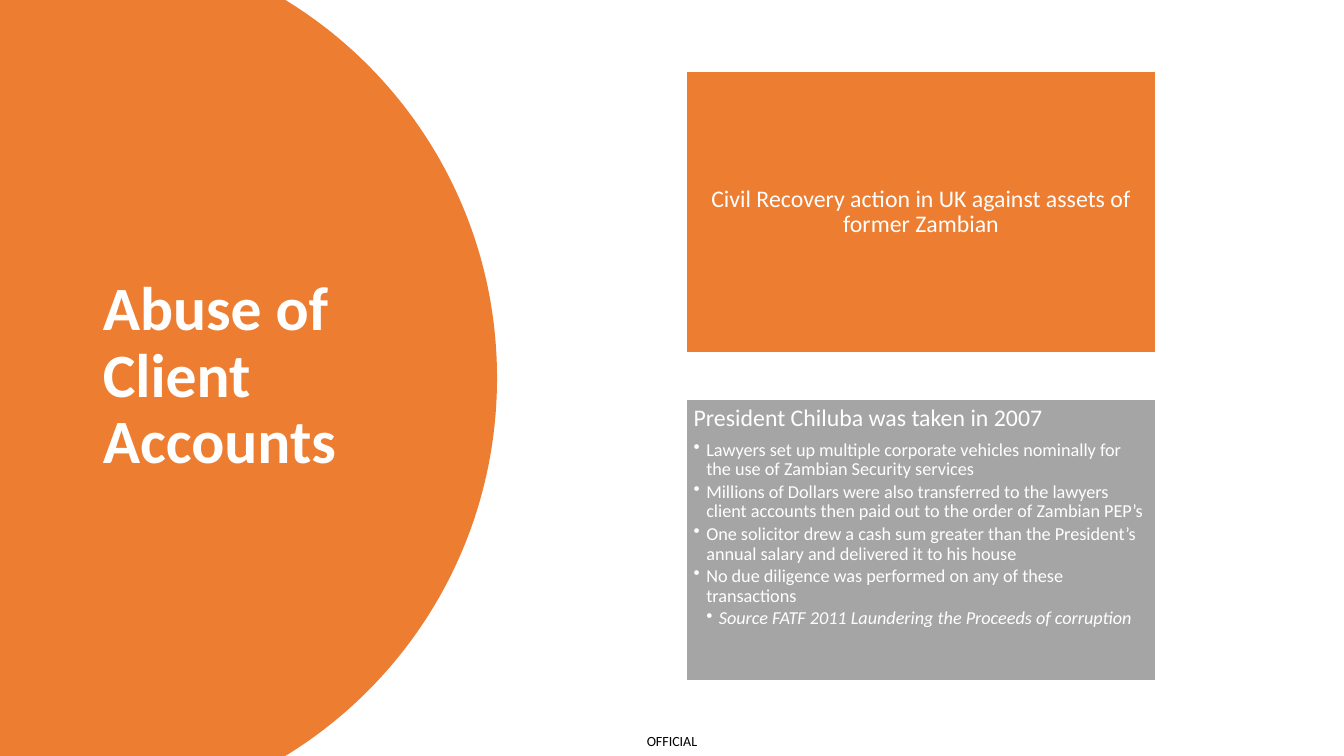
from lxml import etree
from pptx import Presentation
from pptx.dml.color import RGBColor
from pptx.enum.shapes import MSO_SHAPE
from pptx.enum.text import MSO_ANCHOR, MSO_AUTO_SIZE, PP_ALIGN
from pptx.oxml.ns import qn
from pptx.util import Inches, Pt

RECTANGLE = MSO_SHAPE.RECTANGLE
TOP, MIDDLE = MSO_ANCHOR.TOP, MSO_ANCHOR.MIDDLE
LEFT, CENTER = PP_ALIGN.LEFT, PP_ALIGN.CENTER
NO_AUTOFIT = MSO_AUTO_SIZE.NONE

WIDTH, HEIGHT = 13.33, 7.5
FONT = "Calibri"
ORANGE, GREY, WHITE, BLACK = "ED7D31", "A5A5A5", "FFFFFF", "000000"

# Panel column: one left edge, rows at an equal pitch
PANEL_LEFT, PANEL_TOP = 6.81, 0.71
PANEL_WIDTH, PANEL_HEIGHT, PANEL_PITCH = 4.65, 2.79, 3.25
BULLET_INDENT = 0.125

CASE = "Civil Recovery action in UK against assets of former Zambian"
FINDINGS_HEADING = "President Chiluba was taken in 2007"
FINDINGS = [
    "Lawyers set up multiple corporate vehicles nominally for the use of Zambian Security services",
    "Millions of Dollars were also transferred to the lawyers client accounts "
    "then paid out to the order of Zambian PEP’s",
    "One solicitor drew a cash sum greater than the President’s annual salary "
    "and delivered it to his house",
    "No due diligence was performed on any of these transactions",
]
SOURCE = "Source FATF 2011 Laundering the Proceeds of corruption"


def color(hex_string):
    return RGBColor.from_string(hex_string)


def prepare_frame(shape, anchor=MIDDLE, inset=0.1):
    frame = shape.text_frame
    frame.word_wrap = True
    frame.auto_size = NO_AUTOFIT
    frame.vertical_anchor = anchor
    frame.margin_left = frame.margin_right = Inches(inset)
    frame.margin_top = frame.margin_bottom = Inches(inset)
    return frame


def add_bullet(paragraph, level):
    properties = paragraph._p.get_or_add_pPr()
    properties.set("marL", str(Inches(BULLET_INDENT * level)))
    properties.set("indent", str(-Inches(BULLET_INDENT)))
    etree.SubElement(properties, qn("a:buChar")).set("char", "•")


def write(frame, text, size, fill=WHITE, align=LEFT, bold=False, italic=False,
          level=0, spacing=0.9, after=0):
    """Fill the first paragraph of the frame, or append one after it."""
    paragraph = frame.paragraphs[0]
    if paragraph.runs:
        paragraph = frame.add_paragraph()
    paragraph.alignment = align
    paragraph.level = level
    paragraph.line_spacing = spacing
    paragraph.space_before = Pt(0)
    paragraph.space_after = Pt(after)
    if level:
        add_bullet(paragraph, level)
    run = paragraph.add_run()
    run.text = text
    font = run.font
    font.name, font.size = FONT, Pt(size)
    font.bold, font.italic = bold, italic
    font.color.rgb = color(fill)


def add_panel(slide, row, fill, anchor):
    shape = slide.shapes.add_shape(
        RECTANGLE, Inches(PANEL_LEFT), Inches(PANEL_TOP + row * PANEL_PITCH),
        Inches(PANEL_WIDTH), Inches(PANEL_HEIGHT))
    shape.shadow.inherit = False
    shape.fill.solid()
    shape.fill.fore_color.rgb = color(fill)
    shape.line.color.rgb = color(WHITE)
    shape.line.width = Pt(1)
    return prepare_frame(shape, anchor, inset=0.07)


def add_title_disc(slide):
    """Draw the disc cut by the left, top and bottom slide edges."""
    edge, right, middle = 2.83, 4.93, HEIGHT / 2
    upper = [(4.09, 0.77), (right, 2.16), (right, middle)]
    lower = [(right, HEIGHT - 2.16), (4.09, HEIGHT - 0.77), (edge, HEIGHT)]
    points = [(edge, 0), *upper, *lower, (0, HEIGHT)]
    builder = slide.shapes.build_freeform(0, 0)
    builder.add_line_segments([(Inches(x), Inches(y)) for x, y in points], close=True)
    disc = builder.convert_to_shape()

    # Join each run of three curve points into one Bezier segment
    segments = disc._element.findall(".//" + qn("a:lnTo"))
    for start in (1, 4):
        curve = etree.Element(qn("a:cubicBezTo"))
        segments[start].addprevious(curve)
        for segment in segments[start:start + 3]:
            curve.append(segment[0])
            segment.getparent().remove(segment)

    disc.shadow.inherit = False
    disc.fill.solid()
    disc.fill.fore_color.rgb = color(ORANGE)
    disc.line.fill.background()


def place_title(slide, text):
    title = slide.shapes.title
    title.left, title.top = Inches(0.92), Inches(0.7)
    title.width, title.height = Inches(3.23), Inches(6.09)
    write(prepare_frame(title), text, 44, bold=True)
    # Bring the title in front of the disc
    slide.shapes._spTree.append(title._element)


def add_marking(slide, text):
    width, height = 0.8, 0.29
    box = slide.shapes.add_textbox(
        Inches((WIDTH - width) / 2), Inches(HEIGHT - height), Inches(width), Inches(height))
    write(prepare_frame(box, inset=0), text, 10, fill=BLACK, align=CENTER, spacing=1)


def main():
    presentation = Presentation()
    presentation.slide_width, presentation.slide_height = Inches(WIDTH), Inches(HEIGHT)
    slide = presentation.slides.add_slide(presentation.slide_layouts[5])

    # Left: title on the disc
    add_marking(slide, "OFFICIAL")
    add_title_disc(slide)
    place_title(slide, "Abuse of Client Accounts")

    # Right: case and findings
    case = add_panel(slide, 0, ORANGE, MIDDLE)
    write(case, CASE, 17, align=CENTER)
    findings = add_panel(slide, 1, GREY, TOP)
    write(findings, FINDINGS_HEADING, 17, after=6)
    for finding in FINDINGS:
        write(findings, finding, 13, level=1, after=2)
    write(findings, SOURCE, 13, level=2, italic=True, after=2)

    presentation.save("out.pptx")


if __name__ == "__main__":
    main()
